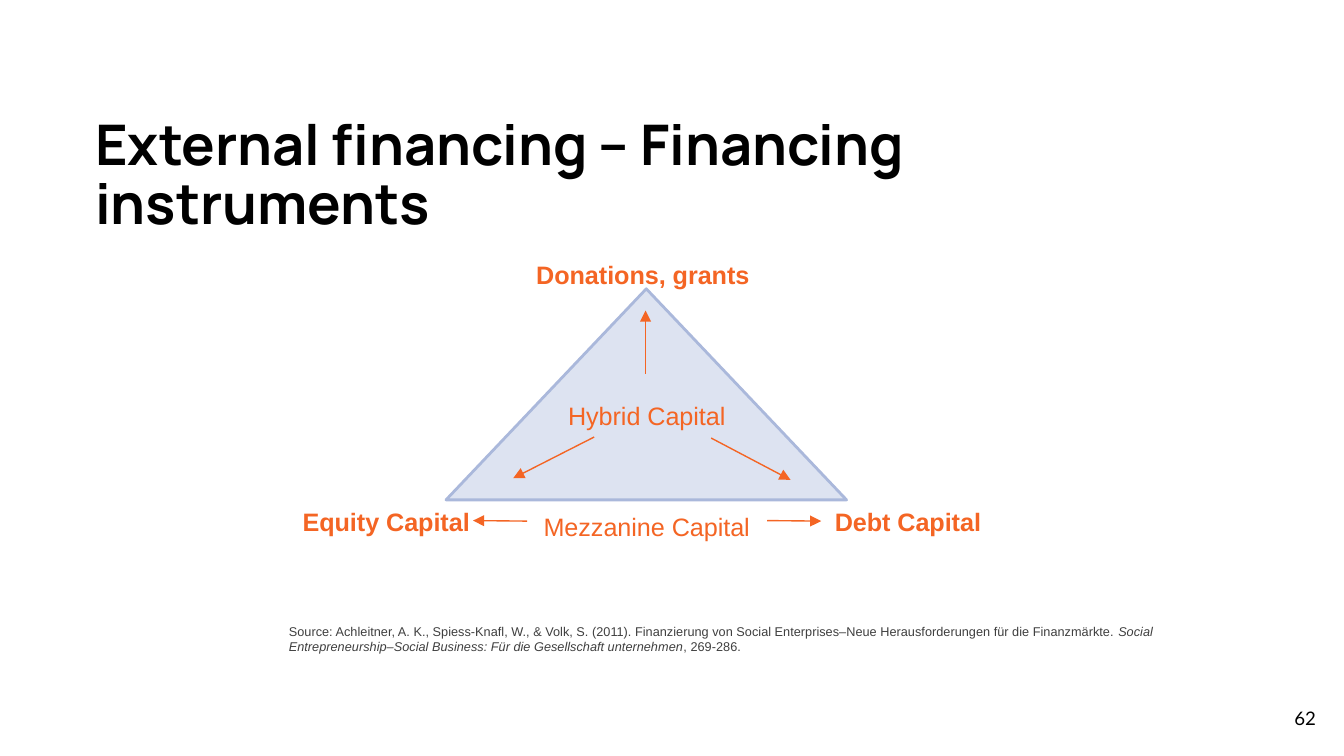
import lxml.etree
import pptx
import pptx.dml.color
import pptx.enum.shapes
import pptx.enum.text
import pptx.oxml.ns
import pptx.util

Cm = pptx.util.Cm
Pt = pptx.util.Pt
RGBColor = pptx.dml.color.RGBColor
ALIGN = pptx.enum.text.PP_ALIGN
ANCHOR = pptx.enum.text.MSO_ANCHOR
AUTO_SIZE = pptx.enum.text.MSO_AUTO_SIZE

BLACK = RGBColor(0x00, 0x00, 0x00)
GREY = RGBColor(0x3F, 0x3F, 0x3F)
ORANGE = RGBColor(0xF4, 0x65, 0x24)
PALE_BLUE = RGBColor(0xDD, 0xE3, 0xF1)
OUTLINE_BLUE = RGBColor(0xAA, 0xB8, 0xDB)

LABEL_HEIGHT = 0.84
TITLE_ONLY_LAYOUT = 5


class SlideBuilder:
    def __init__(self, presentation):
        layout = presentation.slide_layouts[TITLE_ONLY_LAYOUT]
        self.slide = presentation.slides.add_slide(layout)

    def style(self, paragraph, name, size, color, bold=False):
        paragraph.font.name = name
        paragraph.font.size = Pt(size)
        paragraph.font.color.rgb = color
        paragraph.font.bold = bold

    def title(self, text, left, top, width, height):
        shape = self.slide.shapes.title
        shape.left, shape.top = Cm(left), Cm(top)
        shape.width, shape.height = Cm(width), Cm(height)
        frame = shape.text_frame
        frame.text = text
        frame.word_wrap = True
        frame.auto_size = AUTO_SIZE.NONE
        frame.vertical_anchor = ANCHOR.TOP
        frame.margin_left = frame.margin_right = 0
        frame.margin_top = frame.margin_bottom = 0
        paragraph = frame.paragraphs[0]
        paragraph.alignment = ALIGN.LEFT
        paragraph.line_spacing = 0.88
        self.style(paragraph, "Manrope", 30, BLACK, bold=True)

    def text_box(self, left, top, width, height, align, wrap=False):
        """Add an empty text box and return its frame."""
        shape = self.slide.shapes.add_textbox(Cm(left), Cm(top), Cm(width), Cm(height))
        frame = shape.text_frame
        frame.word_wrap = wrap
        frame.paragraphs[0].alignment = align
        return frame

    def label(self, text, left, top, width, bold=False):
        frame = self.text_box(left, top, width, LABEL_HEIGHT, ALIGN.CENTER)
        paragraph = frame.paragraphs[0]
        paragraph.add_run().text = text
        self.style(paragraph, "Arial", 13.5, ORANGE, bold)

    def citation(self, parts, left, top, width):
        """Write (text, italic) parts as one paragraph."""
        frame = self.text_box(left, top, width, LABEL_HEIGHT, ALIGN.LEFT, wrap=True)
        frame.auto_size = AUTO_SIZE.SHAPE_TO_FIT_TEXT
        paragraph = frame.paragraphs[0]
        for text, italic in parts:
            run = paragraph.add_run()
            run.text = text
            run.font.italic = italic
        self.style(paragraph, "Arial", 6.8, GREY)

    def page_number(self, text, left, top, width, height):
        frame = self.text_box(left, top, width, height, ALIGN.RIGHT, wrap=True)
        frame.vertical_anchor = ANCHOR.MIDDLE
        paragraph = frame.paragraphs[0]
        paragraph.add_run().text = text
        self.style(paragraph, "Lato", 10, BLACK)

    def triangle(self, left, top, width, height):
        shape = self.slide.shapes.add_shape(
            pptx.enum.shapes.MSO_SHAPE.ISOSCELES_TRIANGLE,
            Cm(left), Cm(top), Cm(width), Cm(height))
        shape.shadow.inherit = False
        shape.fill.solid()
        shape.fill.fore_color.rgb = PALE_BLUE
        shape.line.color.rgb = OUTLINE_BLUE
        shape.line.width = Pt(1.5)

    def arrow(self, start, end):
        connector = self.slide.shapes.add_connector(
            pptx.enum.shapes.MSO_CONNECTOR.STRAIGHT,
            Cm(start[0]), Cm(start[1]), Cm(end[0]), Cm(end[1]))
        connector.line.color.rgb = ORANGE
        connector.line.width = Pt(0.75)
        qn = pptx.oxml.ns.qn
        properties = connector.line._get_or_add_ln()
        lxml.etree.SubElement(properties, qn("a:tailEnd"), type="triangle")
        lxml.etree.SubElement(connector._element.spPr, qn("a:effectLst"))


def main():
    presentation = pptx.Presentation()
    presentation.slide_width = Cm(25.4)
    presentation.slide_height = Cm(14.29)
    builder = SlideBuilder(presentation)

    builder.title("External financing – Financing instruments", 1.8, 2.24, 18.62, 0.58)
    builder.triangle(8.43, 5.46, 7.57, 3.99)

    for text, left, top, width, bold in (
        ("Donations, grants", 9.75, 4.78, 4.8, True),
        ("Equity Capital", 4.9, 9.45, 4.8, True),
        ("Debt Capital", 14.76, 9.45, 4.8, True),
        ("Mezzanine Capital", 9.7, 9.55, 5.05, False),
        ("Hybrid Capital", 10.46, 7.44, 3.53, False),
    ):
        builder.label(text, left, top, width, bold)

    for start, end in (
        ((9.96, 9.85), (8.94, 9.84)),
        ((14.5, 9.84), (15.52, 9.85)),
        ((11.23, 8.26), (9.7, 9.04)),
        ((13.44, 8.28), (14.94, 9.07)),
        ((12.2, 7.06), (12.2, 5.87)),
    ):
        builder.arrow(start, end)

    builder.citation((
        ("Source: Achleitner, A. K., Spiess-Knafl, W., & Volk, S. (2011). "
         "Finanzierung von Social Enterprises–Neue Herausforderungen "
         "für die Finanzmärkte. ", False),
        ("Social Entrepreneurship–Social Business: "
         "Für die Gesellschaft unternehmen", True),
        (", 269-286.", False),
    ), 5.21, 11.66, 17.4)
    builder.page_number("62", 23.6, 13.03, 1.52, 1.09)

    presentation.save("out.pptx")


if __name__ == "__main__":
    main()
